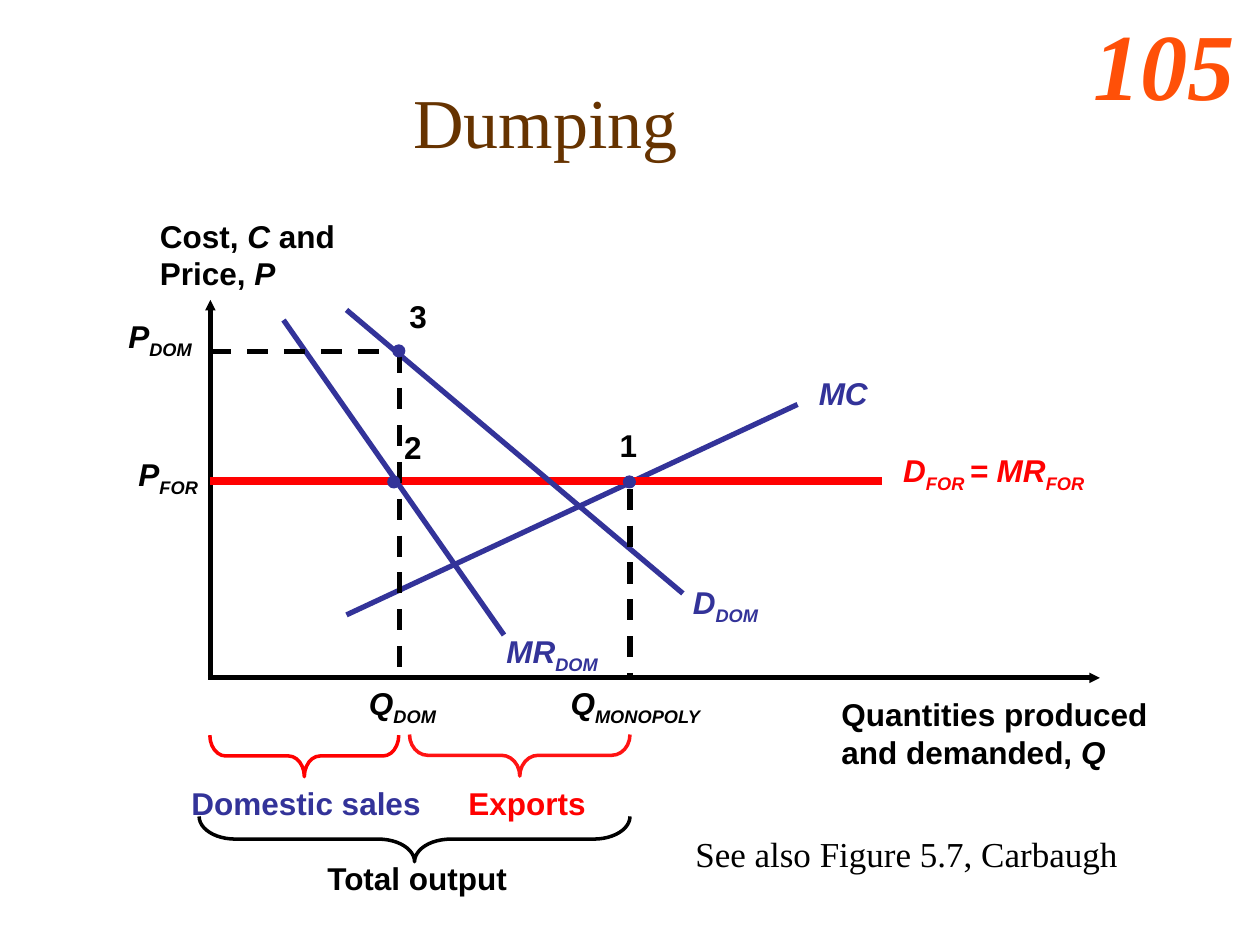
"""Build the Dumping slide: a price and quantity diagram with braces and labels."""

from dataclasses import dataclass

from lxml.etree import SubElement
from pptx import Presentation
from pptx.dml.color import RGBColor
from pptx.enum.dml import MSO_LINE
from pptx.enum.shapes import MSO_CONNECTOR, MSO_SHAPE
from pptx.enum.text import MSO_ANCHOR, PP_ALIGN
from pptx.oxml.ns import qn
from pptx.slide import Slide
from pptx.text.text import TextFrame
from pptx.util import Pt

PX = 9144
BLACK = RGBColor(0x00, 0x00, 0x00)
BLUE = RGBColor(0x33, 0x33, 0x99)
RED = RGBColor(0xFF, 0x01, 0x01)
LIGHT_RED = RGBColor(0xFF, 0x13, 0x13)
BROWN = RGBColor(0x66, 0x33, 0x00)
ORANGE = RGBColor(0xFF, 0x50, 0x08)
SANS = "Arial"
SERIF = "Times New Roman"
DOT_SIZE = 9


@dataclass(frozen=True)
class Piece:
    text: str
    italic: bool = False
    subscript: bool = False


@dataclass(frozen=True)
class Label:
    left: int
    top: int
    width: int
    height: int
    paragraphs: list[list[Piece]]
    color: RGBColor = BLACK
    size: int = 18
    font: str = SANS
    bold: bool = True
    wrap: bool = False


@dataclass(frozen=True)
class Line:
    start: tuple[int, int]
    end: tuple[int, int]
    color: RGBColor = BLACK
    weight: float = 3
    dashed: bool = False
    arrow: bool = False


@dataclass(frozen=True)
class Brace:
    left: int
    top: int
    width: int
    height: int
    curve: float
    color: RGBColor


def plain(text: str) -> list[Piece]:
    return [Piece(text)]


def symbol(letter: str, index: str = "") -> list[Piece]:
    pieces = [Piece(letter, italic=True)]
    return pieces + [Piece(index, italic=True, subscript=True)] if index else pieces


BRACES = [
    Brace(396, 512, 33, 175, 0.44, LIGHT_RED),
    Brace(225, 525, 33, 150, 0.38, RED),
    Brace(311, 495, 36, 342, 0.8, BLACK),
]

LINES = [
    Line((167, 538), (167, 238), arrow=True),
    Line((165, 538), (873, 538), arrow=True),
    Line((275, 488), (633, 321), BLUE),
    Line((167, 382), (700, 382), RED, 4.5),
    Line((225, 254), (400, 504), BLUE),
    Line((275, 246), (542, 471), BLUE),
    Line((167, 279), (317, 279), dashed=True),
    Line((317, 279), (317, 540), dashed=True),
    Line((500, 388), (500, 538), dashed=True),
]

DOTS = [(308, 378), (495, 378), (312, 274)]

LABELS = [
    Label(858, 0, 133, 100, [symbol("105")], ORANGE, 54, SERIF, wrap=True),
    Label(362, 617, 113, 40, [plain("Exports")], RED),
    Label(142, 617, 202, 40, [plain("Domestic sales")], BLUE),
    Label(117, 167, 159, 70, [
        plain("Cost, ") + symbol("C") + plain(" and"),
        plain("Price, ") + symbol("P"),
    ]),
    Label(658, 547, 263, 70, [
        plain("Quantities produced"),
        plain("and demanded, ") + symbol("Q"),
    ]),
    Label(640, 292, 68, 40, [symbol("MC")], BLUE, wrap=True),
    Label(707, 353, 227, 40, [symbol("D", "FOR ") + symbol("= MR", "FOR")], RED, wrap=True),
    Label(392, 497, 125, 40, [symbol("MR", "DOM")], BLUE, wrap=True),
    Label(540, 458, 77, 40, [symbol("D", "DOM")], BLUE),
    Label(100, 356, 72, 40, [symbol("P", "FOR")]),
    Label(92, 247, 80, 40, [symbol("P", "DOM")]),
    Label(283, 538, 100, 40, [symbol("Q", "DOM")], wrap=True),
    Label(443, 538, 157, 40, [symbol("Q", "MONOPOLY")], wrap=True),
    Label(250, 677, 165, 40, [plain("Total output")]),
    Label(482, 333, 34, 40, [plain("1")]),
    Label(311, 335, 34, 40, [plain("2")]),
    Label(315, 231, 34, 40, [plain("3")]),
    Label(542, 656, 370, 43, [plain("See also Figure 5.7, Carbaugh")],
          size=20, font=SERIF, bold=False, wrap=True),
]

TITLE = Label(8, 33, 850, 125, [plain("Dumping")], BROWN, 40, SERIF, bold=False, wrap=True)


def add_label(slide: Slide, label: Label) -> TextFrame:
    box = slide.shapes.add_textbox(
        label.left * PX, label.top * PX, label.width * PX, label.height * PX
    )
    text_frame = box.text_frame
    text_frame.word_wrap = label.wrap
    for index, pieces in enumerate(label.paragraphs):
        paragraph = text_frame.add_paragraph() if index else text_frame.paragraphs[0]
        for piece in pieces:
            run = paragraph.add_run()
            run.text = piece.text
            run.font.name = label.font
            run.font.size = Pt(label.size)
            run.font.bold = label.bold
            run.font.italic = piece.italic
            run.font.color.rgb = label.color
            if piece.subscript:
                run._r.get_or_add_rPr().set("baseline", "-25000")
    return text_frame


def add_line(slide: Slide, line: Line) -> None:
    connector = slide.shapes.add_connector(
        MSO_CONNECTOR.STRAIGHT, *(length * PX for length in line.start + line.end)
    )
    connector.line.color.rgb = line.color
    connector.line.width = Pt(line.weight)
    if line.dashed:
        connector.line.dash_style = MSO_LINE.DASH
    if line.arrow:
        outline = connector.line._get_or_add_ln()
        SubElement(outline, qn("a:tailEnd"), type="triangle", w="sm", len="sm")
    SubElement(connector._element.spPr, qn("a:effectLst"))


def add_brace(slide: Slide, brace: Brace) -> None:
    shape = slide.shapes.add_shape(
        MSO_SHAPE.RIGHT_BRACE,
        brace.left * PX, brace.top * PX, brace.width * PX, brace.height * PX,
    )
    shape.rotation = 90
    shape.adjustments[0] = brace.curve
    shape.adjustments[1] = 0.5
    shape.shadow.inherit = False
    shape.fill.background()
    shape.line.color.rgb = brace.color
    shape.line.width = Pt(2)


def add_dot(slide: Slide, left: int, top: int) -> None:
    shape = slide.shapes.add_shape(
        MSO_SHAPE.OVAL, left * PX, top * PX, DOT_SIZE * PX, DOT_SIZE * PX
    )
    shape.shadow.inherit = False
    shape.fill.solid()
    shape.fill.fore_color.rgb = BLUE
    shape.line.color.rgb = BLUE
    shape.line.width = Pt(1)


def main() -> None:
    presentation = Presentation()
    presentation.slide_width = 1000 * PX
    presentation.slide_height = 750 * PX
    slide = presentation.slides.add_slide(presentation.slide_layouts[6])
    title_frame = add_label(slide, TITLE)
    title_frame.vertical_anchor = MSO_ANCHOR.MIDDLE
    title_frame.paragraphs[0].alignment = PP_ALIGN.CENTER
    for brace in BRACES:
        add_brace(slide, brace)
    for line in LINES:
        add_line(slide, line)
    for left, top in DOTS:
        add_dot(slide, left, top)
    for label in LABELS:
        add_label(slide, label)
    presentation.save("out.pptx")


if __name__ == "__main__":
    main()
